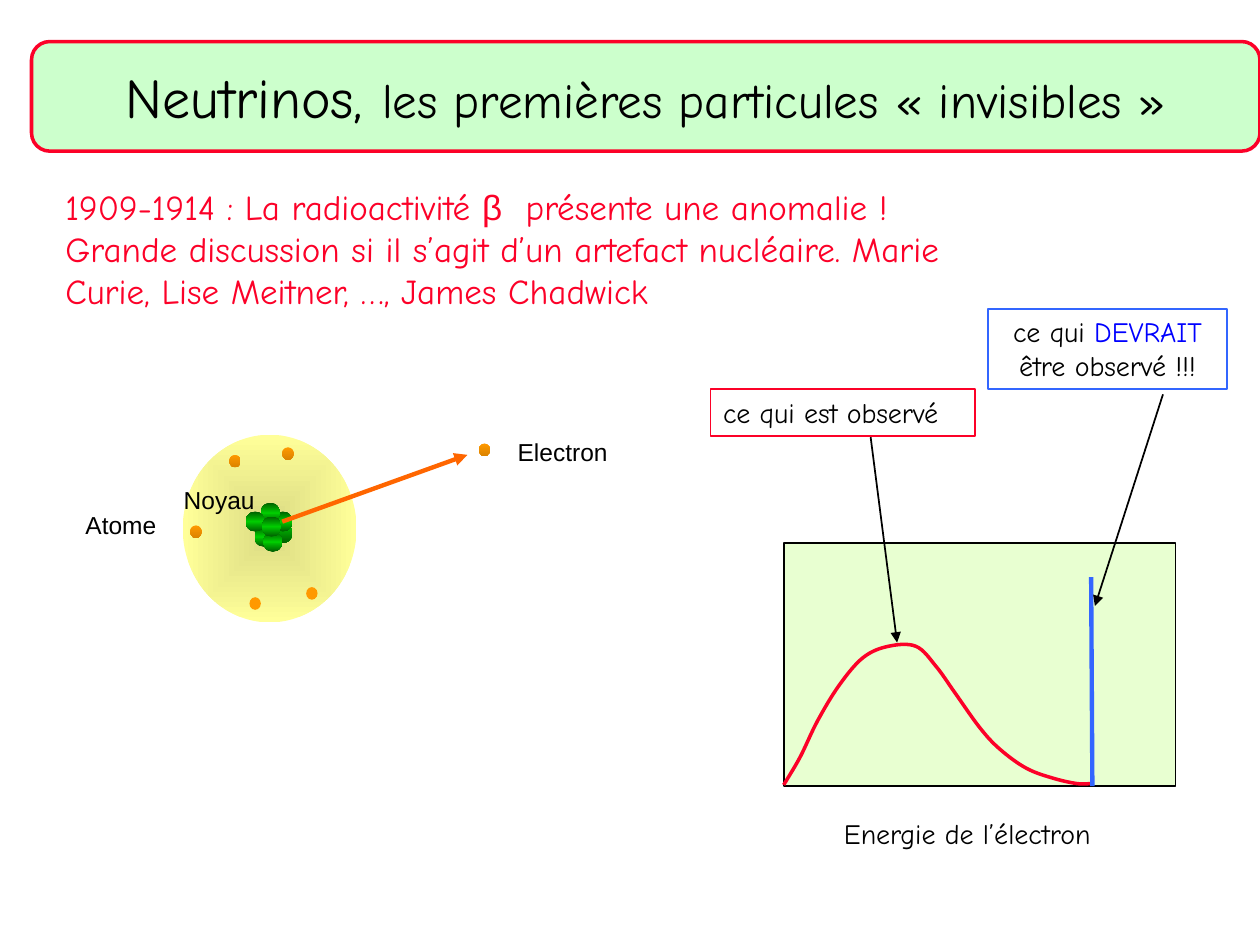
from lxml import etree
from pptx import Presentation
from pptx.dml.color import RGBColor
from pptx.enum.shapes import MSO_CONNECTOR, MSO_SHAPE
from pptx.enum.text import MSO_ANCHOR, PP_ALIGN
from pptx.oxml import parse_xml
from pptx.oxml.ns import nsdecls, qn
from pptx.util import Inches, Pt

HAND, SANS = "Comic Neue", "Arial"
BLACK, RED, BLUE = "000000", "FC0128", "3366FF"
GREENS = [(0, "005E00"), (50, "00CC00"), (100, "005E00")]
ORANGES = [(0, "FF9900"), (100, "DB8300")]
NUCLEONS = [(2.17, 4.06), (2.02, 4.18), (2.07, 3.99), (2.09, 4.22),
            (1.95, 4.06), (2.08, 4.1)]
SHADED_ELECTRONS = [(1.82, 3.61), (2.24, 3.55), (1.51, 4.17), (3.8, 3.52)]
FLAT_ELECTRONS = [(1.98, 4.74), (2.43, 4.66)]
SPECTRUM = [(6.22, 6.23), (6.35, 6.01), (6.49, 5.72), (6.66, 5.44),
            (6.85, 5.22), (7.05, 5.13), (7.27, 5.13), (7.43, 5.29),
            (7.58, 5.5), (7.78, 5.78), (7.94, 5.95), (8.15, 6.1),
            (8.37, 6.18), (8.55, 6.22), (8.65, 6.22)]


def rgb(value):
    return RGBColor.from_string(value)


def write(shape, paragraphs, size=16, font=HAND, color=BLACK,
          align=PP_ALIGN.LEFT, anchor=MSO_ANCHOR.TOP, wrap=True):
    """Fill a shape with paragraphs of (text, overrides) runs."""
    tf = shape.text_frame
    tf.word_wrap = wrap
    tf.vertical_anchor = anchor
    for i, runs in enumerate(paragraphs):
        p = tf.add_paragraph() if i else tf.paragraphs[0]
        p.alignment = align
        for text, changes in runs:
            r = p.add_run()
            r.text = text
            r.font.size = Pt(changes.get("size", size))
            r.font.name = changes.get("font", font)
            r.font.color.rgb = rgb(changes.get("color", color))


def add_text(slide, box, paragraphs, **style):
    tb = slide.shapes.add_textbox(*map(Inches, box))
    write(tb, paragraphs, **style)


def outline(shape, color, width):
    shape.line.color.rgb = rgb(color)
    shape.line.width = Pt(width)


def add_gradient(shape, stops, centered=False):
    """Shade from top to bottom, or outward from the centre."""
    shape.fill.gradient()
    grad = shape._element.spPr.find(qn("a:gradFill"))
    for child in list(grad):
        grad.remove(child)
    gs = "".join(f'<a:gs pos="{pos * 1000}"><a:srgbClr val="{color}"/></a:gs>'
                 for pos, color in stops)
    grad.append(parse_xml(f'<a:gsLst {nsdecls("a")}>{gs}</a:gsLst>'))
    if centered:
        grad.append(parse_xml(
            f'<a:path {nsdecls("a")} path="shape"><a:fillToRect l="50000" '
            't="50000" r="50000" b="50000"/></a:path>'))
    else:
        grad.append(parse_xml(
            f'<a:lin {nsdecls("a")} ang="5400000" scaled="1"/>'))


def add_shape(slide, kind, box, fill=None, line=None, width=1, centered=False):
    """Add a shape; fill is a colour, a list of gradient stops or None."""
    sp = slide.shapes.add_shape(kind, *map(Inches, box))
    sp.shadow.inherit = False
    if fill is None:
        sp.fill.background()
    elif isinstance(fill, str):
        sp.fill.solid()
        sp.fill.fore_color.rgb = rgb(fill)
    else:
        add_gradient(sp, fill, centered)
    if line:
        outline(sp, line, width)
    else:
        sp.line.fill.background()
    return sp


def add_line(slide, start, end, color=BLACK, width=1, arrow=True):
    cn = slide.shapes.add_connector(MSO_CONNECTOR.STRAIGHT,
                                    *map(Inches, start + end))
    outline(cn, color, width)
    spPr = cn._element.spPr
    if arrow:
        etree.SubElement(spPr.find(qn("a:ln")), qn("a:tailEnd"),
                         type="triangle")
    etree.SubElement(spPr, qn("a:effectLst"))


def add_curve(slide, points, color, width):
    """Draw an open smooth (Catmull-Rom) curve through the points."""
    start, *rest = [(Inches(x), Inches(y)) for x, y in points]
    builder = slide.shapes.build_freeform(*start)
    builder.add_line_segments(rest, close=False)
    sp = builder.convert_to_shape()
    sp.shadow.inherit = False
    sp.fill.background()
    outline(sp, color, width)

    route = next(sp._element.iter(qn("a:path")))
    knots = [(int(pt.get("x")), int(pt.get("y")))
             for pt in route.iter(qn("a:pt"))]
    padded = [knots[0], *knots, knots[-1]]
    for segment in list(route)[1:]:
        route.remove(segment)
    for a, b, c, d in zip(padded, padded[1:], padded[2:], padded[3:]):
        first = [q + (r - p) / 6 for p, q, r in zip(a, b, c)]
        second = [r - (s - q) / 6 for q, r, s in zip(b, c, d)]
        bezier = etree.SubElement(route, qn("a:cubicBezTo"))
        for x, y in (first, second, c):
            etree.SubElement(bezier, qn("a:pt"), x=str(round(x)),
                             y=str(round(y)))


def add_title(slide):
    box = (0.25, 0.33, 9.75, 0.87)
    add_shape(slide, MSO_SHAPE.ROUNDED_RECTANGLE, box, "CCFFCC", RED, 2)
    title = slide.shapes.title
    title.left, title.top, title.width, title.height = map(Inches, box)
    # The placeholder comes first in the tree; bring it above the banner.
    slide.shapes._spTree.append(title._element)
    write(title, [[("Neutrinos, ", {"size": 32}),
                   ("les premières particules «\u00a0invisibles\u00a0»", {})]],
          size=28, align=PP_ALIGN.CENTER, anchor=MSO_ANCHOR.MIDDLE)


def add_spectrum(slide):
    add_shape(slide, MSO_SHAPE.RECTANGLE, (6.22, 4.31, 3.11, 1.93),
              "E8FFD1", BLACK)
    add_text(slide, (6.6, 6.43, 2.36, 0.37), [[("Energie de l’électron", {})]])
    add_line(slide, (8.66, 4.58), (8.67, 6.24), BLUE, 2.5, arrow=False)
    add_line(slide, (6.91, 3.47), (7.12, 5.1))
    observed = add_shape(slide, MSO_SHAPE.RECTANGLE, (5.64, 3.09, 2.1, 0.37),
                         line=RED)
    write(observed, [[("ce qui est observé", {})]])
    expected = add_shape(slide, MSO_SHAPE.RECTANGLE, (7.84, 2.45, 1.9, 0.64),
                         line=BLUE)
    write(expected, [[("ce qui ", {}), ("DEVRAIT", {"color": "0000FF"})],
                     [("être observé !!!", {})]], align=PP_ALIGN.CENTER)
    add_line(slide, (9.23, 3.13), (8.69, 4.81))
    add_curve(slide, SPECTRUM, RED, 2)


def add_atom(slide):
    add_shape(slide, MSO_SHAPE.OVAL, (1.45, 3.45, 1.38, 1.49),
              [(0, "DCDC84"), (100, "FFFF99")], centered=True)
    add_shape(slide, MSO_SHAPE.OVAL, (2.17, 4.15, 0.15, 0.16),
              [(0, "00CC00"), (100, "005E00")])
    for corners, size, fill in ((NUCLEONS, (0.15, 0.16), GREENS),
                                (FLAT_ELECTRONS, (0.09, 0.1), "FF9900"),
                                (SHADED_ELECTRONS, (0.09, 0.1), ORANGES)):
        for corner in corners:
            add_shape(slide, MSO_SHAPE.OVAL, corner + size, fill)
    add_line(slide, (2.24, 4.14), (3.71, 3.61), "FF6600", 2.5)
    for text, box in (("Atome", (0.58, 4, 0.77, 0.34)),
                      ("Electron", (4.01, 3.42, 0.92, 0.34)),
                      ("Noyau", (1.36, 3.8, 0.77, 0.34))):
        add_text(slide, box, [[(text, {})]], size=14, font=SANS, wrap=False)


def main():
    prs = Presentation()
    prs.slide_width, prs.slide_height = Inches(10), Inches(7.5)
    slide = prs.slides.add_slide(prs.slide_layouts[5])
    add_title(slide)
    add_spectrum(slide)
    add_text(slide, (0.42, 1.42, 7.58, 1.11), [[
        ("1909-1914 : La radioactivité ", {}),
        ("β", {"font": SANS}),
        ("  présente une anomalie ! Grande discussion si il s’agit d’un "
         "artefact nucléaire. Marie Curie, Lise Meitner, …, James Chadwick",
         {})]], size=20, color=RED)
    add_atom(slide)
    prs.save("out.pptx")


if __name__ == "__main__":
    main()
